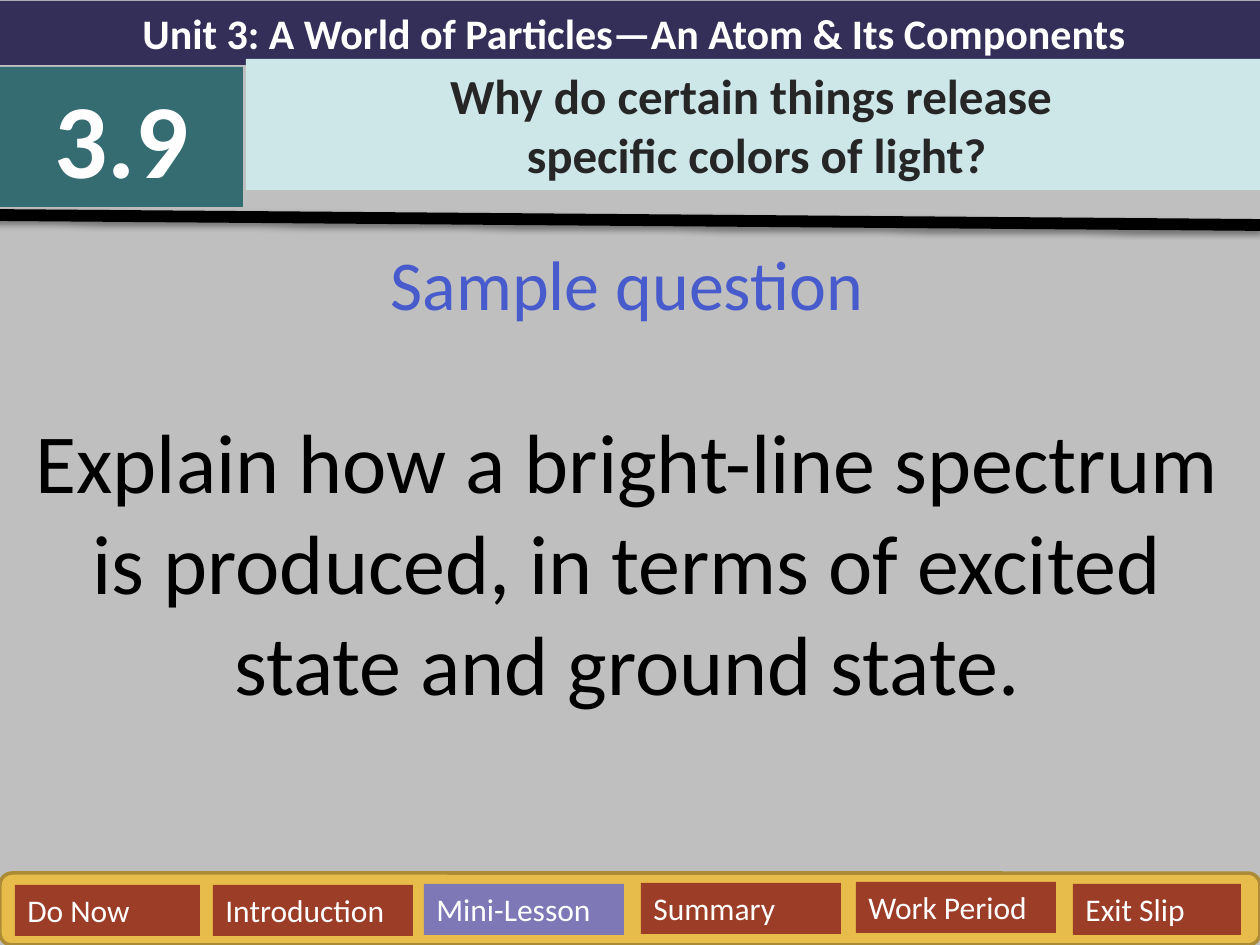
"""Build the lesson 3.9 sample question slide."""
from lxml import etree
from pptx import Presentation
from pptx.dml.color import RGBColor
from pptx.enum.shapes import MSO_CONNECTOR, MSO_SHAPE
from pptx.enum.text import MSO_ANCHOR, MSO_AUTO_SIZE, PP_ALIGN
from pptx.oxml import parse_xml
from pptx.oxml.ns import nsdecls
from pptx.util import Emu, Pt

PX = 914400 / 126
GRAY = RGBColor(0xBF, 0xBF, 0xBF)
NAVY = RGBColor(0x34, 0x2F, 0x59)
TEAL = RGBColor(0x34, 0x6C, 0x71)
PALE = RGBColor(0xCD, 0xE6, 0xE8)
GOLD = RGBColor(0xE8, 0xBC, 0x4A)
GOLD_EDGE = RGBColor(0xAC, 0x8B, 0x37)
RUST = RGBColor(0x9C, 0x3D, 0x28)
VIOLET = RGBColor(0x7E, 0x78, 0xB7)
BLUE = RGBColor(0x47, 0x5B, 0xCD)
INK = RGBColor(0x26, 0x26, 0x26)
BLACK = RGBColor(0, 0, 0)
WHITE = RGBColor(0xFF, 0xFF, 0xFF)


def px(*lengths):
    return [Emu(round(length * PX)) for length in lengths]


def write(shape, lines, align=PP_ALIGN.CENTER, bold=False):
    frame = shape.text_frame
    frame.word_wrap = True
    frame.auto_size = MSO_AUTO_SIZE.NONE
    frame.vertical_anchor = MSO_ANCHOR.TOP
    frame.text = "\n".join(text for text, size, color in lines)
    for para, (text, size, color) in zip(frame.paragraphs, lines):
        para.alignment = align
        para.font.name = "Calibri"
        para.font.size = Pt(size)
        para.font.bold = bold
        para.font.color.rgb = color


deck = Presentation()
deck.slide_width, deck.slide_height = px(1260, 945)
page = deck.slides.add_slide(deck.slide_layouts[5])
page.background.fill.solid()
page.background.fill.fore_color.rgb = GRAY

title = page.shapes.title
title.left, title.top, title.width, title.height = px(0, 1, 1268, 64)
title.fill.solid()
title.fill.fore_color.rgb = NAVY
write(title, [("Unit 3: A World of Particles—An Atom & Its Components", 24, WHITE)], bold=True)

headings = [
    ((0, 67, 243, 140), TEAL, [("3.9", 60, WHITE)]),
    ((246, 59, 1021, 131), PALE, [
        ("Why do certain things release ", 28, INK),
        ("specific colors of light?", 28, INK),
    ]),
]
for place, color, lines in headings:
    box = page.shapes.add_shape(MSO_SHAPE.RECTANGLE, *px(*place))
    box.shadow.inherit = False
    box.fill.solid()
    box.fill.fore_color.rgb = color
    box.line.fill.background()
    write(box, lines, bold=True)

divider = page.shapes.add_connector(MSO_CONNECTOR.STRAIGHT, *px(-6, 215, 1260, 225))
divider.line.color.rgb = BLACK
divider.line.width = Pt(6.75)
effects = parse_xml(f"<a:effectLst {nsdecls('a')}/>")
shadow = etree.SubElement(
    effects, effects.tag.replace("effectLst", "outerShdw"),
    blurRad=str(Pt(3.1)), dist=str(Pt(1.6)), dir="5400000", rotWithShape="0",
)
tint = etree.SubElement(shadow, effects.tag.replace("effectLst", "srgbClr"), val=str(BLACK))
etree.SubElement(tint, effects.tag.replace("effectLst", "alpha"), val="38000")
divider._element.spPr.append(effects)

bar = page.shapes.add_shape(MSO_SHAPE.ROUNDED_RECTANGLE, *px(0, 873, 1260, 72))
bar.shadow.inherit = False
bar.fill.solid()
bar.fill.fore_color.rgb = GOLD
bar.line.color.rgb = GOLD_EDGE
bar.line.width = Pt(2)

tabs = [
    ("Do Now", 15, 885, 185, RUST),
    ("Introduction", 213, 885, 200, RUST),
    ("Mini-Lesson", 424, 884, 200, VIOLET),
    ("Summary", 641, 883, 200, RUST),
    ("Work Period", 856, 882, 200, RUST),
    ("Exit Slip", 1073, 884, 168, RUST),
]
for label, left, top, width, color in tabs:
    tab = page.shapes.add_shape(MSO_SHAPE.RECTANGLE, *px(left, top, width, 51))
    tab.shadow.inherit = False
    tab.fill.solid()
    tab.fill.fore_color.rgb = color
    tab.line.fill.background()
    write(tab, [(label, 18, WHITE)], align=PP_ALIGN.LEFT)

question = page.shapes.add_textbox(*px(-6, 234, 1266, 581))
write(question, [
    ("Sample question", 40, BLUE),
    ("Explain how a bright-line spectrum is produced, in terms of excited state "
     "and ground state.", 48, BLACK),
])
question.text_frame.paragraphs[1].space_before = Pt(49)

deck.save("out.pptx")
